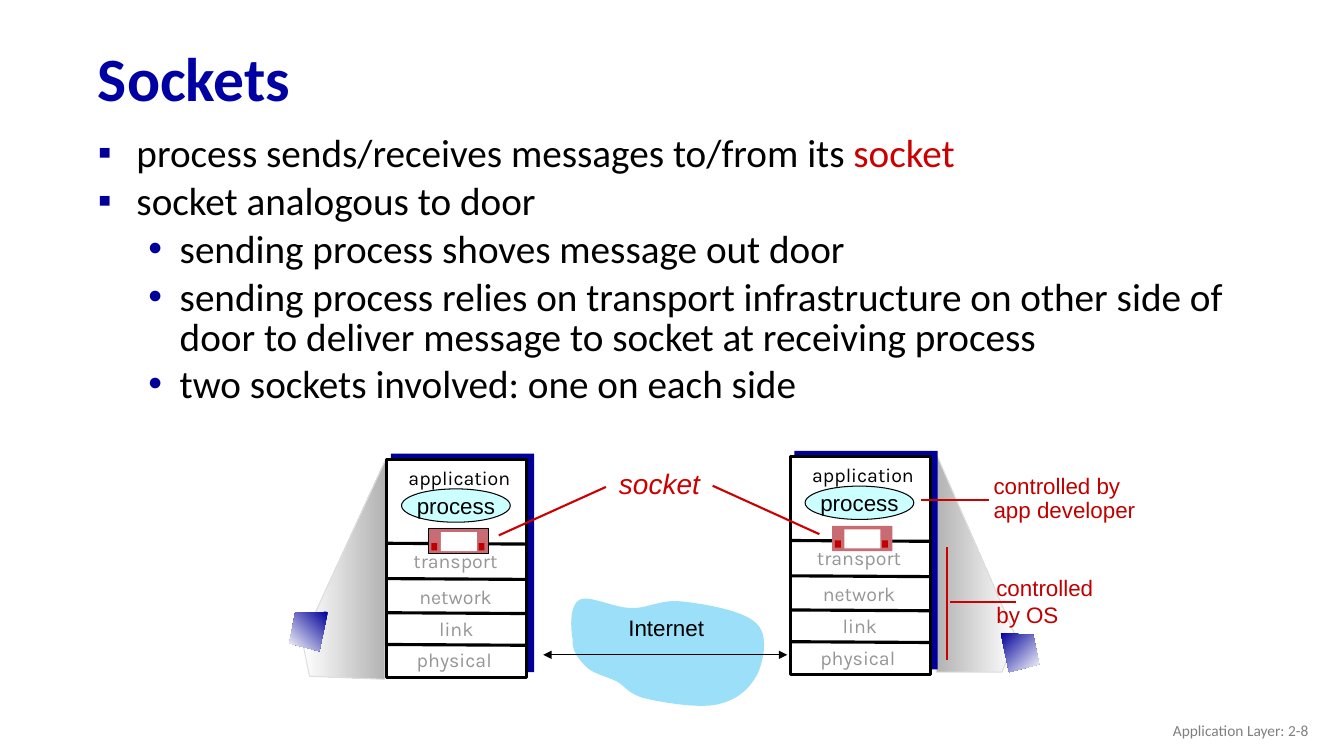
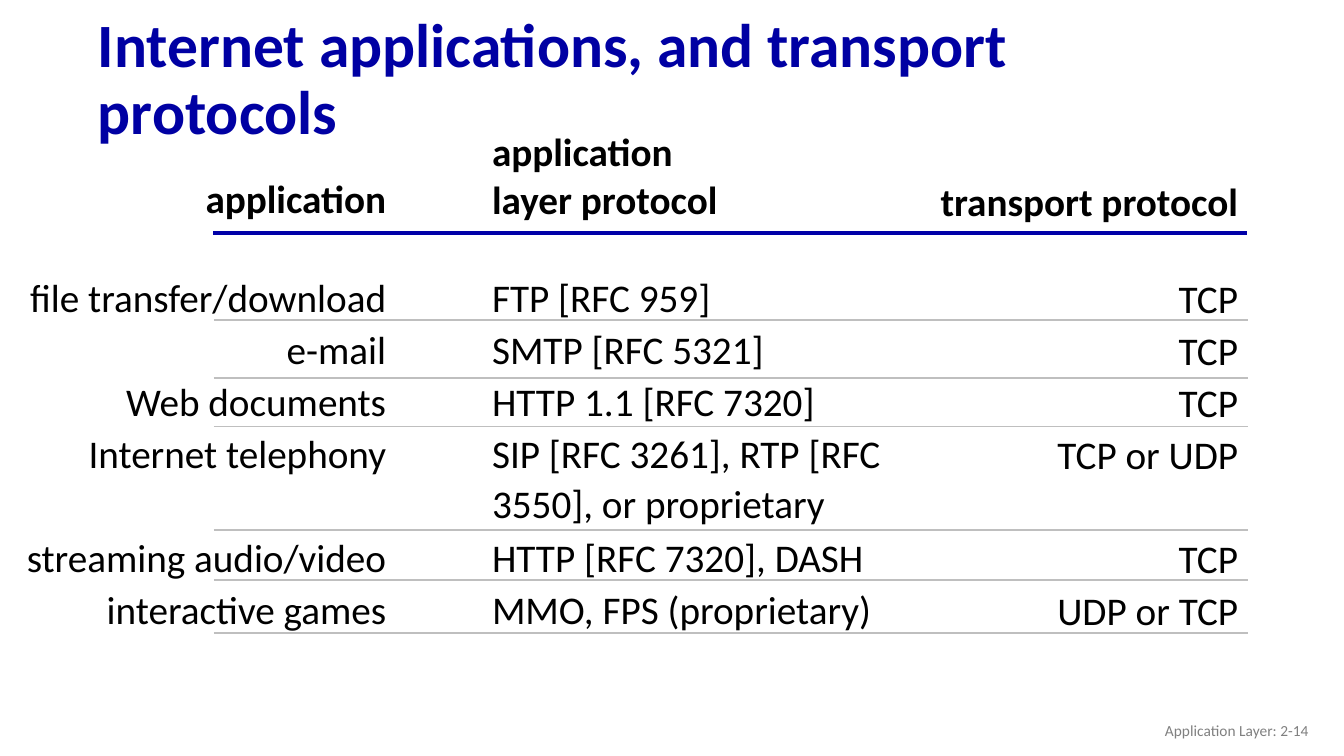
"""Build two lecture slides: sockets, and applications with their transport protocols."""
import pptx
import pptx.dml.color
import pptx.enum.shapes
import pptx.enum.text
import pptx.oxml.ns
import pptx.util
from lxml import etree
from pptx.util import Cm, Pt

SHAPE = pptx.enum.shapes.MSO_SHAPE
ALIGN = pptx.enum.text.PP_ALIGN
ANCHOR = pptx.enum.text.MSO_ANCHOR
BLACK, WHITE = "000000", "FFFFFF"
TITLE_BLUE, NAVY, RED, DARK_RED = "0000A3", "000099", "CC0000", "C00000"
GREY, RULE_GREY, LAYER_GREY = "808080", "BFBFBF", "969696"
PLAIN_TABLE = "{2D5ABB26-0587-4C30-8999-92F81FD0307C}"

CLOUD = [
    (14.43, 16.1),
    (14.38, 15.82), (14.35, 15.24), (14.61, 15.11),
    (14.86, 14.99), (15.47, 15.32), (15.9, 15.32),
    (16.33, 15.34), (16.66, 15.09), (17.2, 15.16),
    (17.73, 15.21), (18.75, 15.39), (19.05, 15.7),
    (19.38, 15.98), (19.25, 16.61), (19.1, 16.97),
    (18.92, 17.3), (18.64, 17.63), (18.08, 17.75),
    (17.6, 17.86), (16.69, 17.7), (16.26, 17.6),
    (15.85, 17.5), (15.77, 17.3), (15.54, 17.17),
    (15.29, 17.04), (14.96, 16.99), (14.78, 16.81),
    (14.61, 16.64), (14.4, 16.41), (14.43, 16.1),
]

BULLETS = [
    (0, [("process sends/receives messages to/from its ", BLACK), ("socket", RED)]),
    (0, [("socket analogous to door", BLACK)]),
    (1, [("sending process shoves message out door", BLACK)]),
    (1, [("sending process relies on transport infrastructure on other side of "
          "door to deliver message to socket at receiving process", BLACK)]),
    (1, [("two sockets involved: one on each side", BLACK)]),
]

PROTOCOLS = [
    ("application", "application\nlayer protocol", "transport protocol"),
    ("file transfer/download", "FTP [RFC 959]", "TCP"),
    ("e-mail", "SMTP [RFC 5321]", "TCP"),
    ("Web documents", "HTTP 1.1 [RFC 7320]", "TCP"),
    ("Internet telephony", "SIP [RFC 3261], RTP [RFC 3550], or proprietary", "TCP or UDP"),
    ("streaming audio/video", "HTTP [RFC 7320], DASH", "TCP"),
    ("interactive games", "MMO, FPS (proprietary)", "UDP or TCP"),
]


def rgb(color):
    """Turn a hex string into a colour."""
    return pptx.dml.color.RGBColor.from_string(color)


def add_xml(parent, tag, **attributes):
    """Append a DrawingML element to a parent."""
    return etree.SubElement(parent, pptx.oxml.ns.qn(tag), attributes)


def add_run(paragraph, text, size, color, font="Calibri", bold=False, italic=False):
    """Add one formatted run to a paragraph."""
    run = paragraph.add_run()
    run.text = text
    run.font.size, run.font.name = Pt(size), font
    run.font.bold, run.font.italic = bold, italic
    run.font.color.rgb = rgb(color)


def fill_frame(frame, text, size, color, align=ALIGN.LEFT, spacing=1.0, **font):
    """Write each line of the text as a paragraph."""
    for index, line in enumerate(text.split("\n")):
        paragraph = frame.add_paragraph() if index else frame.paragraphs[0]
        paragraph.alignment, paragraph.line_spacing = align, spacing
        add_run(paragraph, line, size, color, **font)


def add_text(slide, box, text, size, color, anchor=ANCHOR.TOP, wrap=True, **style):
    """Add a text box with uniformly styled text."""
    frame = slide.shapes.add_textbox(*map(Cm, box)).text_frame
    frame.word_wrap, frame.vertical_anchor = wrap, anchor
    fill_frame(frame, text, size, color, **style)


def outline(shape, color=None, width=0.75):
    """Remove the shadow and set or hide the outline."""
    shape.shadow.inherit = False
    if color:
        shape.line.color.rgb = rgb(color)
        shape.line.width = Pt(width)
    else:
        shape.line.fill.background()


def add_block(slide, kind, box, color, line=None, width=0.75):
    """Add a filled preset shape."""
    block = slide.shapes.add_shape(kind, *map(Cm, box))
    block.fill.solid()
    block.fill.fore_color.rgb = rgb(color)
    outline(block, line, width)
    return block


def add_outline(slide, points, line=None):
    """Add a closed freeform through the points."""
    start, *rest = [(Cm(x), Cm(y)) for x, y in points]
    builder = slide.shapes.build_freeform(*start)
    builder.add_line_segments(rest, close=True)
    polygon = builder.convert_to_shape()
    outline(polygon, line)
    return polygon


def curve(polygon):
    """Turn every three straight segments into one cubic curve."""
    segments = list(polygon._element.iter(pptx.oxml.ns.qn("a:lnTo")))
    for first in range(0, len(segments) - 2, 3):
        bend = etree.Element(pptx.oxml.ns.qn("a:cubicBezTo"))
        segments[first].addprevious(bend)
        for segment in segments[first:first + 3]:
            bend.append(segment[0])
            segment.getparent().remove(segment)


def shade(shape, first, last, angle):
    """Fill a shape with a two-colour gradient."""
    shape.fill.gradient()
    shape.fill.gradient_angle = angle
    for stop, color, position in zip(shape.fill.gradient_stops, (first, last), (0, 1)):
        stop.color.rgb = rgb(color)
        stop.position = position


def add_line(slide, x1, y1, x2, y2, color, width, arrows=False):
    """Add a straight line, with arrowheads at both ends if asked."""
    line = slide.shapes.add_connector(
        pptx.enum.shapes.MSO_CONNECTOR.STRAIGHT, Cm(x1), Cm(y1), Cm(x2), Cm(y2))
    line.line.color.rgb = rgb(color)
    line.line.width = Pt(width)
    if arrows:
        for end in ("a:headEnd", "a:tailEnd"):
            add_xml(line.line._get_or_add_ln(), end, type="triangle")
    add_xml(line._element.spPr, "a:effectLst")


def add_page(deck, title, number):
    """Add a slide with its title and footer."""
    slide = deck.slides.add_slide(deck.slide_layouts[6])
    add_text(slide, (2.22, 0.8, 29.21, 2.49), title, 44, TITLE_BLUE,
             anchor=ANCHOR.MIDDLE, spacing=0.9, bold=True)
    add_text(slide, (25.61, 17.9, 7.62, 1.02), f"Application Layer: {number}", 11, GREY,
             anchor=ANCHOR.MIDDLE, align=ALIGN.RIGHT)
    return slide


def add_bullets(slide):
    """Add the two-level bullet list."""
    frame = slide.shapes.add_textbox(Cm(2.22), Cm(3.29), Cm(30.45), Cm(6.48)).text_frame
    frame.word_wrap = True
    levels = [(0.97, -0.97, "▪"), (2.06, -0.79, "•")]
    for index, (level, runs) in enumerate(BULLETS):
        paragraph = frame.add_paragraph() if index else frame.paragraphs[0]
        paragraph.level, paragraph.line_spacing = level, 0.85
        paragraph.space_before = Pt(5.6)
        margin, indent, mark = levels[level]
        properties = paragraph._p.get_or_add_pPr()
        properties.set("marL", str(Cm(margin)))
        properties.set("indent", str(Cm(indent)))
        add_xml(add_xml(properties, "a:buClr"), "a:srgbClr", val=NAVY)
        add_xml(properties, "a:buFont", typeface="Arial")
        add_xml(properties, "a:buChar", char=mark)
        for text, color in runs:
            add_run(paragraph, text, 28, color)


def add_host(slide, left, top, socket_line=None):
    """Add a protocol stack with its process and socket."""
    def place(x, y, width, height):
        """Shift a box into the stack."""
        return left + x, top + y, width, height

    add_block(slide, SHAPE.RECTANGLE, place(0.1, -0.15, 3.61, 5.51), NAVY)
    add_block(slide, SHAPE.RECTANGLE, place(0, 0, 3.53, 5.49), WHITE, BLACK, 2.25)
    for y in (2.11, 3.0, 3.86, 4.66):
        add_line(slide, left + 0.02, top + y, left + 3.53, top + y + 0.02, BLACK, 2.25)
    layers = [("application", 0, -0.03, BLACK), ("transport", -0.1, 2.06, LAYER_GREY),
              ("network", -0.1, 2.97, LAYER_GREY), ("link", -0.08, 3.78, LAYER_GREY),
              ("physical", -0.13, 4.57, LAYER_GREY)]
    for name, x, y, color in layers:
        add_text(slide, place(x, y, 3.66, 0.91), name, 14, color,
                 align=ALIGN.CENTER, spacing=1.1, font="Karla")
    process = add_block(slide, SHAPE.OVAL, place(0.37, 0.74, 2.74, 0.84), "CCFFFF", BLACK)
    process.text_frame.word_wrap = False
    process.text_frame.vertical_anchor = ANCHOR.MIDDLE
    fill_frame(process.text_frame, "process", 16, BLACK, align=ALIGN.CENTER, font="Arial")
    add_block(slide, SHAPE.RECTANGLE, place(1.05, 1.74, 1.52, 0.64), "C96B72", socket_line)
    add_block(slide, SHAPE.RECTANGLE, place(1.36, 1.83, 0.91, 0.48), WHITE)
    for x in (1.12, 2.31):
        add_block(slide, SHAPE.RECTANGLE, place(x, 2.11, 0.15, 0.18), DARK_RED)


def add_sockets_slide(deck):
    """Build the slide on sockets."""
    slide = add_page(deck, "Sockets", "2-8")
    add_bullets(slide)
    right_beam = [(25.6, 16.05), (23.57, 11.38), (23.6, 16.94), (25.25, 16.94)]
    left_beam = [(7.62, 16.15), (9.73, 11.56), (9.7, 17.12), (7.8, 17.04)]
    shade(add_outline(slide, right_beam, "DDDDDD"), "B2B2B2", WHITE, 0)
    cloud = add_outline(slide, CLOUD)
    curve(cloud)
    cloud.fill.solid()
    cloud.fill.fore_color.rgb = rgb("9CDFF9")
    add_text(slide, (15.57, 15.34, 2.44, 0.94), "Internet", 16, BLACK, wrap=False,
             align=ALIGN.CENTER, font="Arial")
    add_line(slide, 13.69, 16.5, 19.84, 16.5, BLACK, 0.75, arrows=True)
    add_text(slide, (24.86, 14.35, 2.95, 2.29), "controlled\nby OS", 16, DARK_RED,
             wrap=False, font="Arial")
    add_text(slide, (24.79, 11.84, 4.09, 1.47), "controlled by\napp developer", 16,
             DARK_RED, wrap=False, spacing=0.9, font="Arial")
    shade(add_outline(slide, left_beam, "DDDDDD"), WHITE, "B2B2B2", 0)
    add_host(slide, 9.75, 11.58, BLACK)
    add_host(slide, 19.92, 11.51)
    add_text(slide, (15.35, 11.73, 3, 1.02), "socket", 20, RED, wrap=False,
             spacing=0.9, font="Arial", italic=True)
    pointers = [(24.92, 12.6, 23.22, 12.6), (23.86, 13.79, 23.86, 16.64),
                (25.6, 15.18, 23.93, 15.18), (12.57, 13.49, 15.27, 12.27),
                (20.65, 13.46, 17.96, 12.24)]
    for pointer in pointers:
        add_line(slide, *pointer, RED, 1.5)
    left_device = [(8.26, 15.42), (7.44, 15.44), (7.29, 16.21), (8.05, 16.41)]
    right_device = [(25.22, 15.95), (26.04, 16), (26.19, 16.74), (25.43, 16.94)]
    shade(add_outline(slide, left_device), NAVY, WHITE, 225)
    shade(add_outline(slide, right_device), NAVY, WHITE, 315)


def add_protocol_table(slide):
    """Add the table of applications and protocols."""
    columns = [(9.65, ALIGN.RIGHT, 0, 1.22, 36), (13.34, ALIGN.LEFT, 2.42, 1.22, 36),
               (8.13, ALIGN.RIGHT, 0, 1.15, 37)]
    widths = [column[0] for column in columns]
    heights = (3.61, 1.31, 1.31, 1.31, 2.62, 1.31, 1.31)
    frame = slide.shapes.add_table(len(heights), len(widths), Cm(0.33), Cm(3.26),
                                   Cm(sum(widths)), Cm(sum(heights)))
    table = frame.table
    table.first_row = table.horz_banding = False
    for style in frame._element.iter(pptx.oxml.ns.qn("a:tableStyleId")):
        style.text = PLAIN_TABLE
    for column, width in zip(table.columns, widths):
        column.width = Cm(width)
    for index, (row, height, texts) in enumerate(zip(table.rows, heights, PROTOCOLS)):
        header = index == 0
        row.height = Cm(height)
        for cell, text, (_, align, left, below, pitch) in zip(row.cells, texts, columns):
            cell.fill.background()
            cell.margin_left, cell.margin_right = Cm(left), Cm(0.25)
            cell.margin_top, cell.margin_bottom = Cm(0), Cm(below if header else 0)
            cell.vertical_anchor = ANCHOR.BOTTOM if header else ANCHOR.TOP
            fill_frame(cell.text_frame, text, 28, BLACK, align=align, bold=header,
                       spacing=1.0 if header else Pt(pitch))


def add_protocols_slide(deck):
    """Build the slide on applications and transport protocols."""
    slide = add_page(deck, "Internet applications, and transport protocols", "2-14")
    add_protocol_table(slide)
    add_line(slide, 5.37, 5.87, 31.42, 5.87, "0000A8", 2.5)
    for y in (8.06, 9.53, 10.75, 13.36, 14.62, 15.95):
        add_line(slide, 5.39, y, 31.45, y, RULE_GREY, 1.25)


def main():
    """Build and save the deck."""
    deck = pptx.Presentation()
    deck.slide_width, deck.slide_height = Cm(33.87), Cm(19.05)
    add_sockets_slide(deck)
    add_protocols_slide(deck)
    deck.save("out.pptx")


if __name__ == "__main__":
    main()
